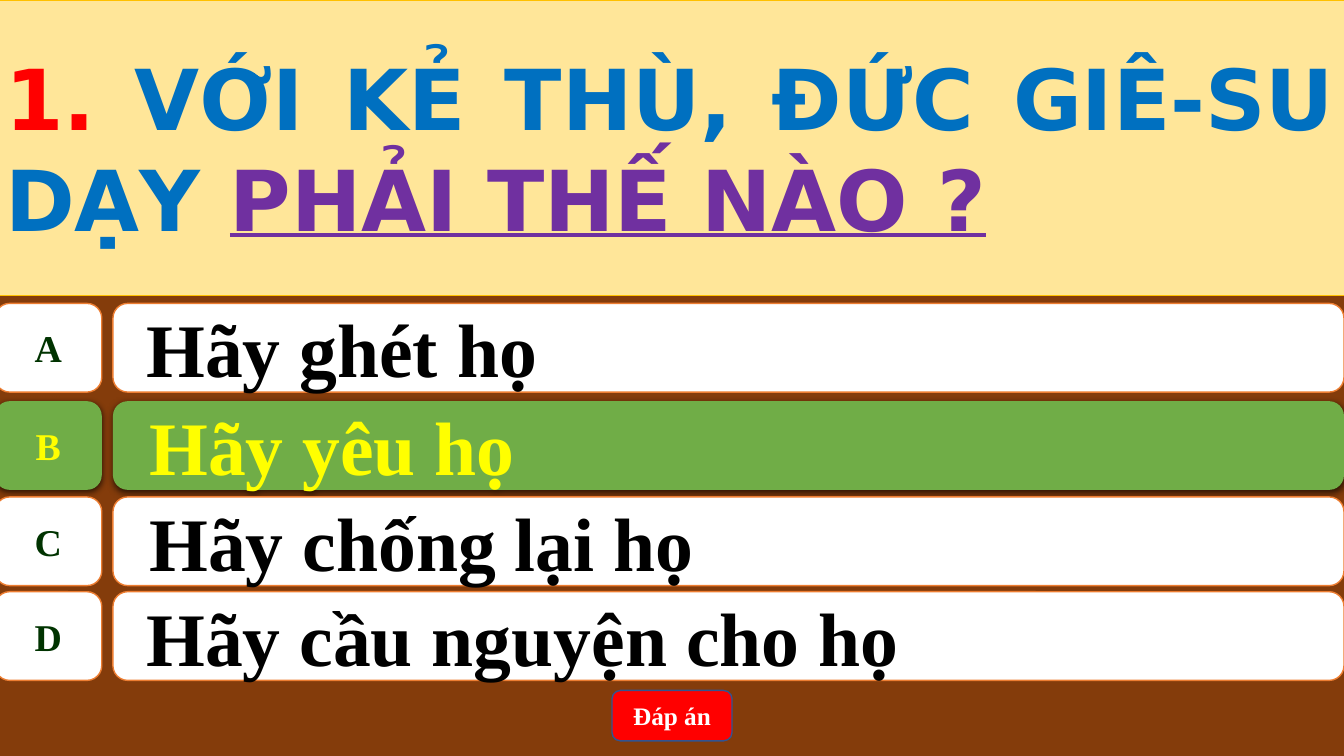
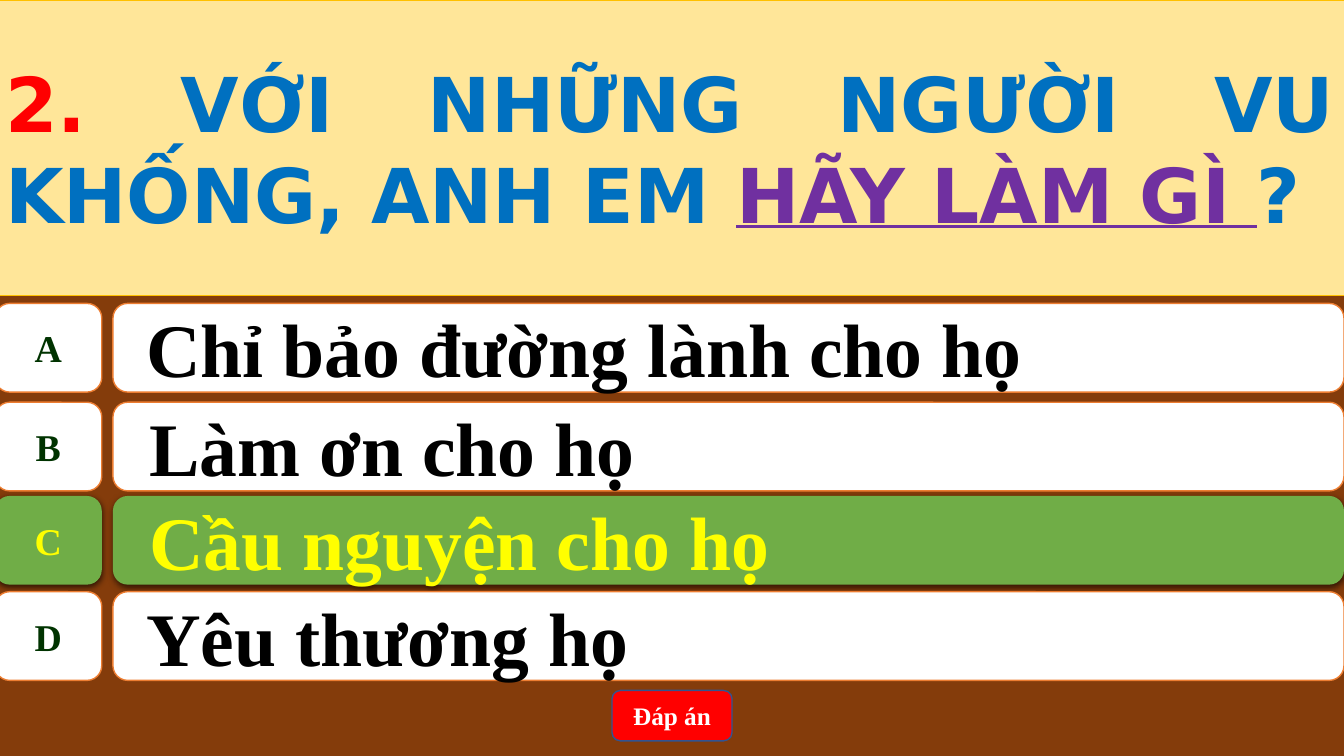
from lxml import etree
from pptx import Presentation
from pptx.dml.color import RGBColor
from pptx.enum.shapes import MSO_SHAPE
from pptx.enum.text import MSO_ANCHOR, MSO_AUTO_SIZE, PP_ALIGN
from pptx.oxml.ns import qn
from pptx.util import Pt

ROUND = MSO_SHAPE.ROUNDED_RECTANGLE
LABEL = MSO_SHAPE.FLOWCHART_ALTERNATE_PROCESS
MIDDLE = MSO_ANCHOR.MIDDLE
NO_FIT = MSO_AUTO_SIZE.NONE
LEFT, CENTER, JUSTIFY = PP_ALIGN.LEFT, PP_ALIGN.CENTER, PP_ALIGN.JUSTIFY

PX = 9144
SERIF, SANS = "Times New Roman", "DejaVu Sans"
BROWN, CREAM, GOLD, ORANGE = "843C0B", "FFE699", "FFC000", "ED7D31"
WHITE, BLACK, DARK_GREEN, GREEN = "FFFFFF", "000000", "003300", "70AD47"
YELLOW, RED, NAVY, BLUE, PURPLE = "FFFF00", "FF0000", "325491", "0070C0", "7030A0"

ROWS = [("A", 301, 19), ("B", 399, 22), ("C", 493, 22), ("D", 587, 19)]
QUESTIONS = [
    {
        "size": 60,
        "title": [("1. ", RED, False), ("VỚI KẺ THÙ, ĐỨC GIÊ-SU DẠY ", BLUE, False),
                  ("PHẢI THẾ NÀO ?", PURPLE, True)],
        "options": ["Hãy ghét họ", "Hãy yêu họ", "Hãy chống lại họ",
                    "Hãy cầu nguyện cho họ"],
        "answer": "B",
    },
    {
        "size": 54,
        "title": [("2. ", RED, False), ("VỚI NHỮNG NGƯỜI VU KHỐNG, ANH EM ", BLUE, False),
                  ("HÃY LÀM GÌ ", PURPLE, True), ("?", BLUE, False)],
        "options": ["Chỉ bảo đường lành cho họ", "Làm ơn cho họ",
                    "Cầu nguyện cho họ", "Yêu thương họ"],
        "answer": "C",
    },
]


def rgb(value):
    return RGBColor.from_string(value)


def style(sp, box, fill, line, runs, size, font, align, wrap=True):
    for name, value in zip(("left", "top", "width", "height"), box):
        setattr(sp, name, value * PX)
    sp.fill.solid()
    sp.fill.fore_color.rgb = rgb(fill)
    if line:
        sp.line.color.rgb = rgb(line[0])
        sp.line.width = Pt(line[1])
    else:
        sp.line.fill.background()
    tf = sp.text_frame
    for name, value in {"word_wrap": wrap, "auto_size": NO_FIT,
                        "vertical_anchor": MIDDLE}.items():
        setattr(tf, name, value)
    p = tf.paragraphs[0]
    p.alignment = align
    p.line_spacing = 1.0
    for text, color, underline in runs:
        r = p.add_run()
        r.text = text
        for name, value in {"name": font, "size": Pt(size), "bold": True,
                            "underline": underline}.items():
            setattr(r.font, name, value)
        r.font.color.rgb = rgb(color)
    return p


prs = Presentation()
prs.slide_width, prs.slide_height = 1333 * PX, 750 * PX
bg = prs.slide_master.background.fill
bg.solid()
bg.fore_color.rgb = rgb(BROWN)

for question in QUESTIONS:
    s = prs.slides.add_slide(prs.slide_layouts[5])
    style(s.shapes.title, (-5, 0, 1339, 293), CREAM, (GOLD, 0.5),
          question["title"], question["size"], SANS, JUSTIFY)

    for (letter, top, indent), option in zip(ROWS, question["options"]):
        correct = letter == question["answer"]
        top = top - 1 if correct else top
        fill = GREEN if correct else WHITE
        line = None if correct else (ORANGE, 1)
        group = s.shapes.add_group_shape()
        parts = [
            (LABEL, (-5, top, 106, 88), letter, DARK_GREEN, 27, CENTER, False, 0),
            (ROUND, (112, top, 1221, 88), option, BLACK, 54, LEFT, True, indent),
        ]
        for kind, box, text, color, size, align, wrap, margin in parts:
            sp = group.shapes.add_shape(kind, *(v * PX for v in box))
            sp.shadow.inherit = False
            color = YELLOW if correct else color
            p = style(sp, box, fill, line, [(text, color, False)],
                      size, SERIF, align, wrap)
            p._p.get_or_add_pPr().set("marL", str(margin * PX))
            if correct:
                effects = sp._element.spPr.find(qn("a:effectLst"))
                shadow = etree.SubElement(effects, qn("a:outerShdw"), blurRad="57150",
                                          dist="19050", dir="5400000", rotWithShape="0")
                black = etree.SubElement(shadow, qn("a:srgbClr"), val=BLACK)
                etree.SubElement(black, qn("a:alpha"), val="63000")

    box = (607, 685, 119, 50)
    sp = s.shapes.add_shape(ROUND, *(v * PX for v in box))
    sp.shadow.inherit = False
    style(sp, box, RED, (NAVY, 1), [("Đáp án", WHITE, False)], 18, SERIF, CENTER)

prs.save("out.pptx")
